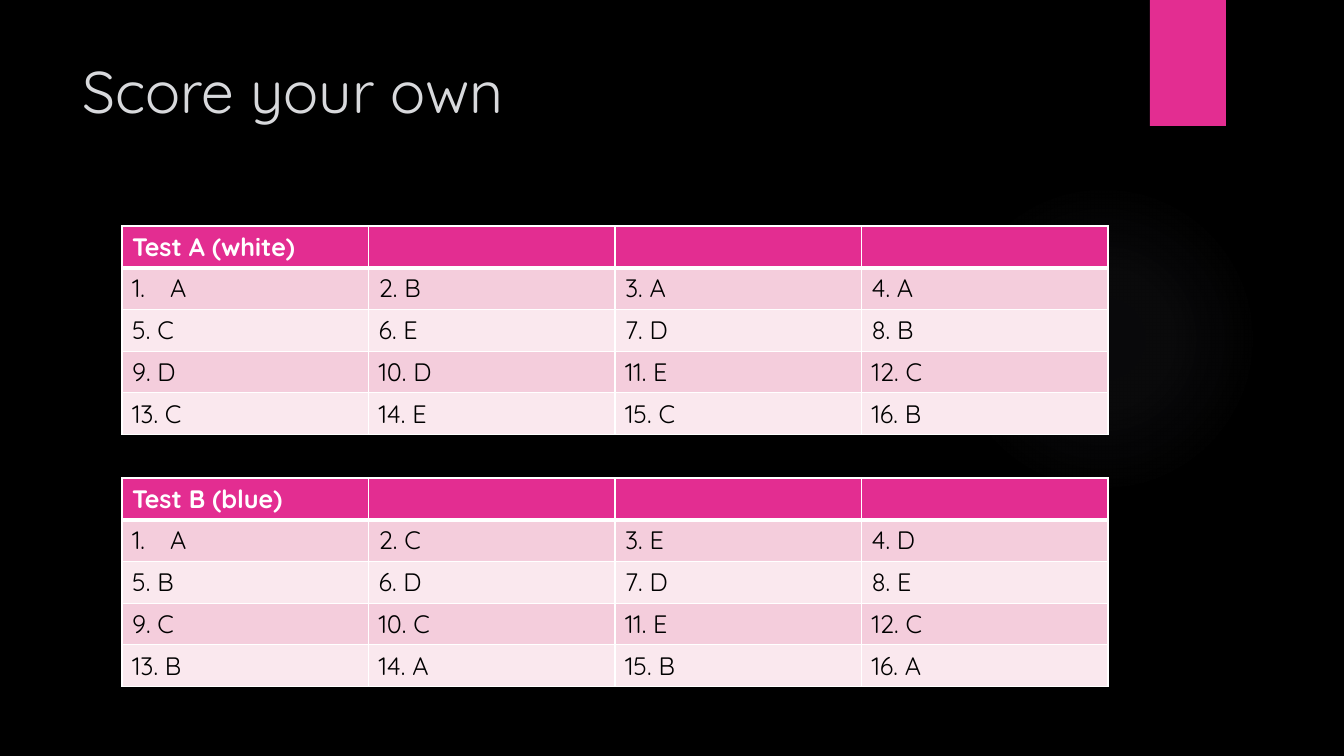
"""Build the answer-key slide with the keys of two tests."""
import dataclasses

import lxml.etree
import pptx
import pptx.dml.color
import pptx.enum.shapes
import pptx.enum.text
import pptx.oxml
import pptx.oxml.ns
import pptx.shapes.autoshape
import pptx.slide
import pptx.table
import pptx.text.text
import pptx.util

PX_PER_INCH = 100.8
COLUMNS = 4


@dataclasses.dataclass(frozen=True)
class Theme:
    font: str = "Quicksand"
    title_size: int = 42
    table_size: int = 18
    background: str = "000000"
    title: str = "D8D9DC"
    accent: str = "E32D91"
    glow: str = "8A8A9C"
    header_text: str = "FFFFFF"
    body_text: str = "000000"
    border: str = "FFFFFF"
    bands: tuple[str, str] = ("F4CDDC", "FAE8EE")
    thin: int = 1
    thick: int = 3


@dataclasses.dataclass(frozen=True)
class AnswerKey:
    heading: str
    answers: str
    top: int


THEME = Theme()
KEYS = (
    AnswerKey("Test A (white)", "ABAACEDBDDECCECB", 226),
    AnswerKey("Test B (blue)", "ACEDBDDECCECBABA", 478),
)


def px(length: int) -> pptx.util.Emu:
    """Turn pixels into EMU."""
    return pptx.util.Inches(length / PX_PER_INCH)


def rgb(color: str) -> pptx.dml.color.RGBColor:
    """Turn a hex string into a colour."""
    return pptx.dml.color.RGBColor.from_string(color)


def format_text(para: pptx.text.text._Paragraph, size: int, color: str, bold: bool = False) -> None:
    """Set the font of a paragraph."""
    para.font.name = THEME.font
    para.font.size = pptx.util.Pt(size)
    para.font.bold = bold
    para.font.color.rgb = rgb(color)


def add_plain_shape(
    page: pptx.slide.Slide,
    kind: pptx.enum.shapes.MSO_SHAPE,
    left: int,
    top: int,
    width: int,
    height: int,
) -> pptx.shapes.autoshape.Shape:
    """Add an accent shape without outline or shadow."""
    shape = page.shapes.add_shape(kind, px(left), px(top), px(width), px(height))
    shape.shadow.inherit = False
    shape.line.fill.background()
    shape.fill.solid()
    shape.fill.fore_color.rgb = rgb(THEME.accent)
    return shape


def add_glow(page: pptx.slide.Slide) -> None:
    """Add the faint radial glow."""
    glow = add_plain_shape(page, pptx.enum.shapes.MSO_SHAPE.OVAL, 949, 184, 310, 310)
    stops = "".join(
        f'<a:gs pos="{position * 1000}"><a:srgbClr val="{THEME.glow}">'
        f'<a:alpha val="{alpha * 1000}"/></a:srgbClr></a:gs>'
        for position, alpha in ((0, 7), (36, 6), (69, 0))
    )
    gradient = pptx.oxml.parse_xml(
        f'<a:gradFill {pptx.oxml.ns.nsdecls("a")}><a:gsLst>{stops}</a:gsLst>'
        '<a:path path="circle"><a:fillToRect l="50000" t="50000" r="50000" b="50000"/>'
        "</a:path></a:gradFill>"
    )
    properties = glow._element.spPr
    properties.replace(properties.find(pptx.oxml.ns.qn("a:solidFill")), gradient)


def add_title(page: pptx.slide.Slide, text: str) -> None:
    """Place and format the title."""
    title = page.shapes.title
    title.left, title.top, title.width, title.height = px(72), px(50), px(1037), px(154)
    frame = title.text_frame
    frame.text = text
    frame.vertical_anchor = pptx.enum.text.MSO_ANCHOR.TOP
    para = frame.paragraphs[0]
    para.alignment = pptx.enum.text.PP_ALIGN.LEFT
    format_text(para, THEME.title_size, THEME.title)


def set_borders(cell: pptx.table._Cell, row: int) -> None:
    """Draw the cell borders, with a thick line under the header."""
    widths = {
        "lnL": THEME.thin,
        "lnR": THEME.thin,
        "lnT": THEME.thick if row == 1 else THEME.thin,
        "lnB": THEME.thick if row == 0 else THEME.thin,
    }
    properties = cell._tc.get_or_add_tcPr()
    for side, width in widths.items():
        properties.append(pptx.oxml.parse_xml(
            f'<a:{side} {pptx.oxml.ns.nsdecls("a")} w="{pptx.util.Pt(width)}">'
            f'<a:solidFill><a:srgbClr val="{THEME.border}"/></a:solidFill></a:{side}>'
        ))


def number_paragraph(para: pptx.text.text._Paragraph) -> None:
    """Number a paragraph automatically with a hanging indent."""
    properties = para._p.get_or_add_pPr()
    properties.set("marL", str(px(38)))
    properties.set("indent", str(-px(38)))
    qn = pptx.oxml.ns.qn
    lxml.etree.SubElement(properties, qn("a:buFont"), typeface=THEME.font)
    lxml.etree.SubElement(properties, qn("a:buAutoNum"), type="arabicPeriod")


def fill_cell(cell: pptx.table._Cell, row: int, text: str, numbered: bool = False) -> None:
    """Write and format one table cell."""
    header = row == 0
    set_borders(cell, row)
    cell.fill.solid()
    cell.fill.fore_color.rgb = rgb(THEME.accent if header else THEME.bands[(row - 1) % 2])
    cell.text = text
    para = cell.text_frame.paragraphs[0]
    if numbered:
        number_paragraph(para)
    color = THEME.header_text if header else THEME.body_text
    format_text(para, THEME.table_size, color, header)


def add_answer_key(page: pptx.slide.Slide, key: AnswerKey) -> None:
    """Add the table of one test."""
    rows = 1 + len(key.answers) // COLUMNS
    frame = page.shapes.add_table(rows, COLUMNS, px(122), px(key.top), px(986), px(41 * rows))
    table = frame.table
    for column in range(COLUMNS):
        fill_cell(table.cell(0, column), 0, "" if column else key.heading)
    for index, answer in enumerate(key.answers):
        row, column = index // COLUMNS + 1, index % COLUMNS
        text = f"{index + 1}. {answer}" if index else answer
        fill_cell(table.cell(row, column), row, text, numbered=index == 0)


def main() -> None:
    """Build and save the deck."""
    deck = pptx.Presentation()
    deck.slide_width, deck.slide_height = px(1344), px(756)
    page = deck.slides.add_slide(deck.slide_layouts.get_by_name("Title Only"))
    page.background.fill.solid()
    page.background.fill.fore_color.rgb = rgb(THEME.background)
    add_glow(page)
    add_plain_shape(page, pptx.enum.shapes.MSO_SHAPE.RECTANGLE, 1150, 0, 76, 126)
    add_title(page, "Score your own")
    for key in KEYS:
        add_answer_key(page, key)
    deck.save("out.pptx")


if __name__ == "__main__":
    main()
